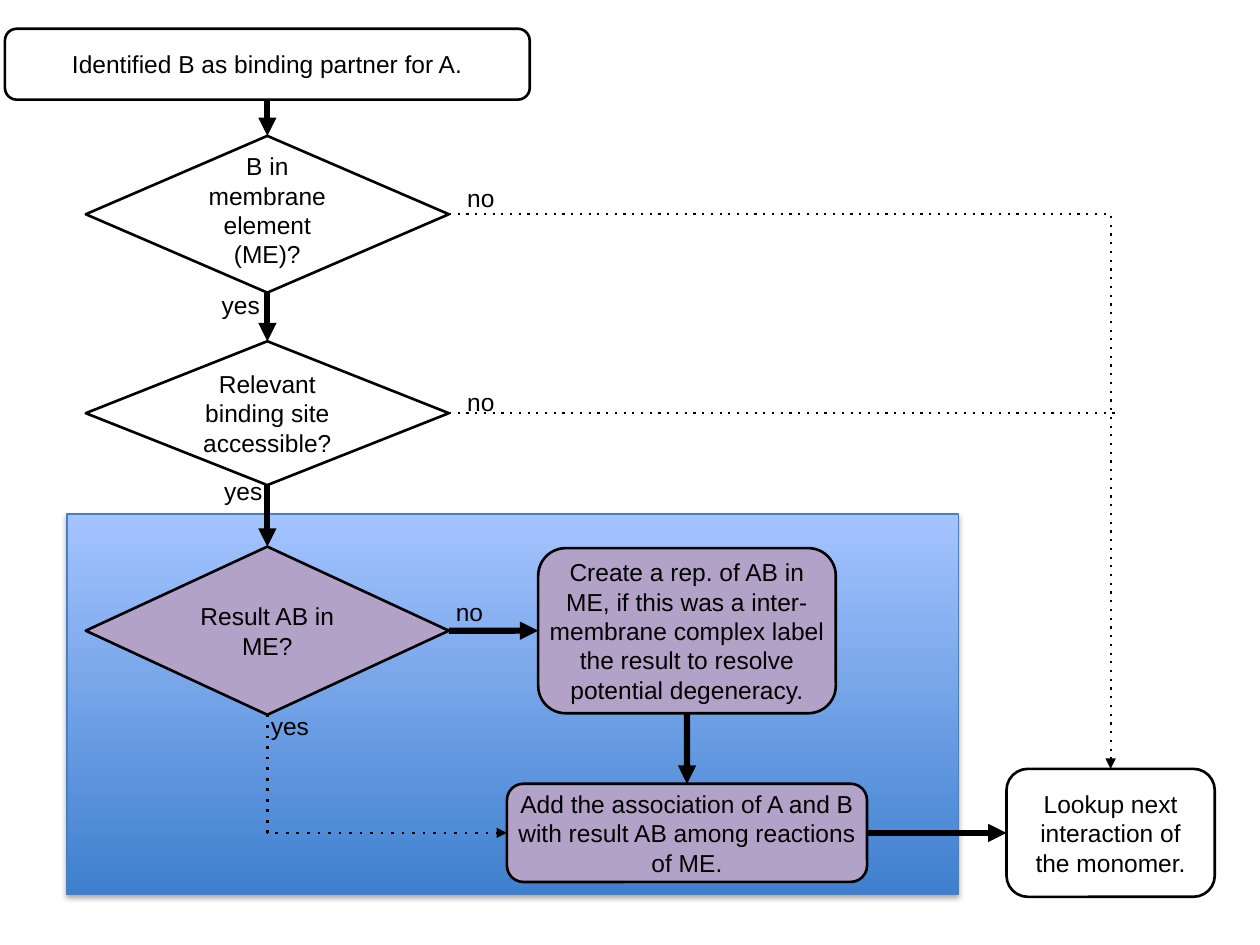
from dataclasses import dataclass

from pptx import Presentation
from pptx.dml.color import RGBColor
from pptx.enum.dml import MSO_LINE
from pptx.enum.shapes import MSO_CONNECTOR, MSO_SHAPE
from pptx.enum.text import MSO_ANCHOR, MSO_AUTO_SIZE, PP_ALIGN
from pptx.oxml import parse_xml
from pptx.oxml.ns import nsdecls, qn
from pptx.util import Cm, Pt

DIAMOND = MSO_SHAPE.DIAMOND
ROUNDED = MSO_SHAPE.ROUNDED_RECTANGLE
RECTANGLE = MSO_SHAPE.RECTANGLE
STRAIGHT = MSO_CONNECTOR.STRAIGHT
ELBOW = MSO_CONNECTOR.ELBOW
TOP, LEFT, BOTTOM, RIGHT = range(4)


@dataclass(frozen=True)
class Theme:
    font: str = "Arial"
    size: float = 14
    ink: str = "000000"
    plain: str = "FFFFFF"
    accent: str = "B3A2C7"
    panel_bottom: str = "3F80CE"
    panel_top: str = "A4C4FF"
    panel_line: str = "4B7EBC"
    outline: float = 1.5
    flow: float = 3.5
    dotted: float = 1.25


@dataclass(frozen=True)
class Box:
    """A rectangle in centimetres."""
    left: float
    top: float
    width: float
    height: float

    def inner(self, left, top, width, height):
        return Box(self.left + left, self.top + top, width, height)

    def lengths(self):
        return Cm(self.left), Cm(self.top), Cm(self.width), Cm(self.height)


THEME = Theme()
DIAMOND_WIDTH = 7.32


def rgb(value):
    return RGBColor.from_string(value)


def write_text(shape, text):
    paragraph = shape.text_frame.paragraphs[0]
    paragraph.text = text
    paragraph.font.name = THEME.font
    paragraph.font.size = Pt(THEME.size)
    paragraph.font.color.rgb = rgb(THEME.ink)
    return paragraph


def add_node(slide, kind, box, text, fill=THEME.plain, inset=None):
    shape = slide.shapes.add_shape(kind, *box.lengths())
    shape.shadow.inherit = False
    shape.fill.solid()
    shape.fill.fore_color.rgb = rgb(fill)
    shape.line.color.rgb = rgb(THEME.ink)
    shape.line.width = Pt(THEME.outline)
    frame = shape.text_frame
    frame.word_wrap = True
    frame.vertical_anchor = MSO_ANCHOR.MIDDLE
    if inset is not None:
        frame.margin_left = frame.margin_right = Cm(inset)
        frame.margin_top = frame.margin_bottom = Cm(inset)
    write_text(shape, text).alignment = PP_ALIGN.CENTER
    return shape


def add_label(slide, box, left, top, text):
    width = {"no": 1.07, "yes": 1.32}[text]
    label = slide.shapes.add_textbox(*box.inner(left, top, width, 0.86).lengths())
    label.text_frame.word_wrap = False
    label.text_frame.auto_size = MSO_AUTO_SIZE.SHAPE_TO_FIT_TEXT
    write_text(label, text)


def style_connector(connector, width, dotted=False, arrow=True):
    connector.line.color.rgb = rgb(THEME.ink)
    connector.line.width = Pt(width)
    properties = connector._element.spPr
    line = properties.find(qn("a:ln"))
    if dotted:
        connector.line.dash_style = MSO_LINE.ROUND_DOT
        line.find(qn("a:prstDash")).set("val", "dot")
    if arrow:
        line.append(parse_xml(f'<a:tailEnd {nsdecls("a")} type="triangle"/>'))
    properties.append(parse_xml(f'<a:effectLst {nsdecls("a")}/>'))


def join(slide, start, start_side, end, end_side, kind=STRAIGHT):
    connector = slide.shapes.add_connector(kind, 0, 0, 0, 0)
    connector.begin_connect(start, start_side)
    connector.end_connect(end, end_side)
    return connector


def add_flow(slide, start, start_side, end, end_side):
    style_connector(join(slide, start, start_side, end, end_side), THEME.flow)


def add_corner(slide, start, start_side, end, end_side, width):
    """Dotted arrow with one corner, running right and down."""
    connector = join(slide, start, start_side, end, end_side, ELBOW)
    properties = connector._element.spPr
    properties.find(qn("a:prstGeom")).set("prst", "bentConnector2")
    if start_side == BOTTOM:
        # Turn the preset so that its first leg runs down
        across, down = connector.width, connector.height
        connector.left += (across - down) // 2
        connector.top += (down - across) // 2
        connector.width, connector.height = down, across
        transform = properties.find(qn("a:xfrm"))
        transform.set("rot", "16200000")
        transform.set("flipH", "1")
    style_connector(connector, width, dotted=True)


def add_screening(slide, box):
    """Starting point and the two entry questions."""
    start = add_node(slide, ROUNDED, box.inner(0, 0, box.width, 1.43),
                     "Identified B as binding partner for A.")
    left = (box.width - DIAMOND_WIDTH) / 2
    member = add_node(slide, DIAMOND, box.inner(left, 2.16, DIAMOND_WIDTH, 3.16),
                      "B in membrane element (ME)?")
    member.text_frame.margin_bottom = Cm(0.3)
    site = add_node(slide, DIAMOND, box.inner(left, 6.3, DIAMOND_WIDTH, 2.9),
                    "Relevant binding site accessible?")
    add_flow(slide, start, BOTTOM, member, TOP)
    add_flow(slide, member, BOTTOM, site, TOP)
    for left, top, text in ((9.07, 2.98, "no"), (9.07, 7.09, "no"),
                            (4.12, 5.14, "yes"), (4.17, 8.89, "yes")):
        add_label(slide, box, left, top, text)
    return member, site


def add_panel(slide, box):
    """Gradient background with a soft shadow."""
    panel = slide.shapes.add_shape(RECTANGLE, *box.lengths())
    panel.fill.gradient()
    panel.fill.gradient_angle = 90
    for stop, color in zip(panel.fill.gradient_stops,
                           (THEME.panel_bottom, THEME.panel_top)):
        stop.color.rgb = rgb(color)
    panel.line.color.rgb = rgb(THEME.panel_line)
    panel.line.width = Pt(0.75)
    panel.shadow.inherit = False
    panel._element.spPr.find(qn("a:effectLst")).append(parse_xml(
        f'<a:outerShdw {nsdecls("a")} blurRad="{Pt(3.1)}" dist="{Pt(1.8)}" '
        'dir="5400000" rotWithShape="0"><a:srgbClr val="000000">'
        '<a:alpha val="35000"/></a:srgbClr></a:outerShdw>'))


def add_membrane_steps(slide, box):
    """Steps inside the membrane element panel."""
    add_panel(slide, box)
    result = add_node(slide, DIAMOND, box.inner(0.38, 0.66, DIAMOND_WIDTH, 3.39),
                      "Result AB in ME?", THEME.accent)
    create = add_node(slide, ROUNDED, box.inner(9.5, 0.69, 6, 3.33),
                      "Create a rep. of AB in ME, if this was a inter-membrane "
                      "complex label the result to resolve potential degeneracy.",
                      THEME.accent, inset=0)
    associate = add_node(slide, ROUNDED, box.inner(8.87, 5.44, 7.26, 1.98),
                         "Add the association of A and B with result AB "
                         "among reactions of ME.", THEME.accent, inset=0)
    add_flow(slide, result, RIGHT, create, LEFT)
    add_flow(slide, create, BOTTOM, associate, TOP)
    add_corner(slide, result, BOTTOM, associate, LEFT, THEME.outline)
    add_label(slide, box, 7.59, 1.55, "no")
    add_label(slide, box, 3.86, 3.84, "yes")
    return result, associate


def add_exit(slide, box, member, site, associate):
    """Final step and the paths that lead to it."""
    lookup = add_node(slide, ROUNDED, box,
                      "Lookup next interaction of the monomer.")
    add_flow(slide, associate, RIGHT, lookup, LEFT)
    add_corner(slide, member, RIGHT, lookup, TOP, THEME.dotted)
    level = site.top + site.height // 2
    branch = slide.shapes.add_connector(
        STRAIGHT, site.left + site.width, level, Cm(box.left + 2.29), level)
    branch.begin_connect(site, RIGHT)
    style_connector(branch, THEME.dotted, dotted=True, arrow=False)


def main():
    presentation = Presentation()
    presentation.slide_width, presentation.slide_height = Cm(25.4), Cm(19.05)
    slide = presentation.slides.add_slide(presentation.slide_layouts[6])
    result, associate = add_membrane_steps(slide, Box(1.35, 10.36, 17.98, 7.67))
    member, site = add_screening(slide, Box(0.1, 0.58, 10.58, 9.2))
    add_flow(slide, site, BOTTOM, result, TOP)
    add_exit(slide, Box(20.29, 15.5, 4.2, 2.58), member, site, associate)
    presentation.save("out.pptx")


if __name__ == "__main__":
    main()
